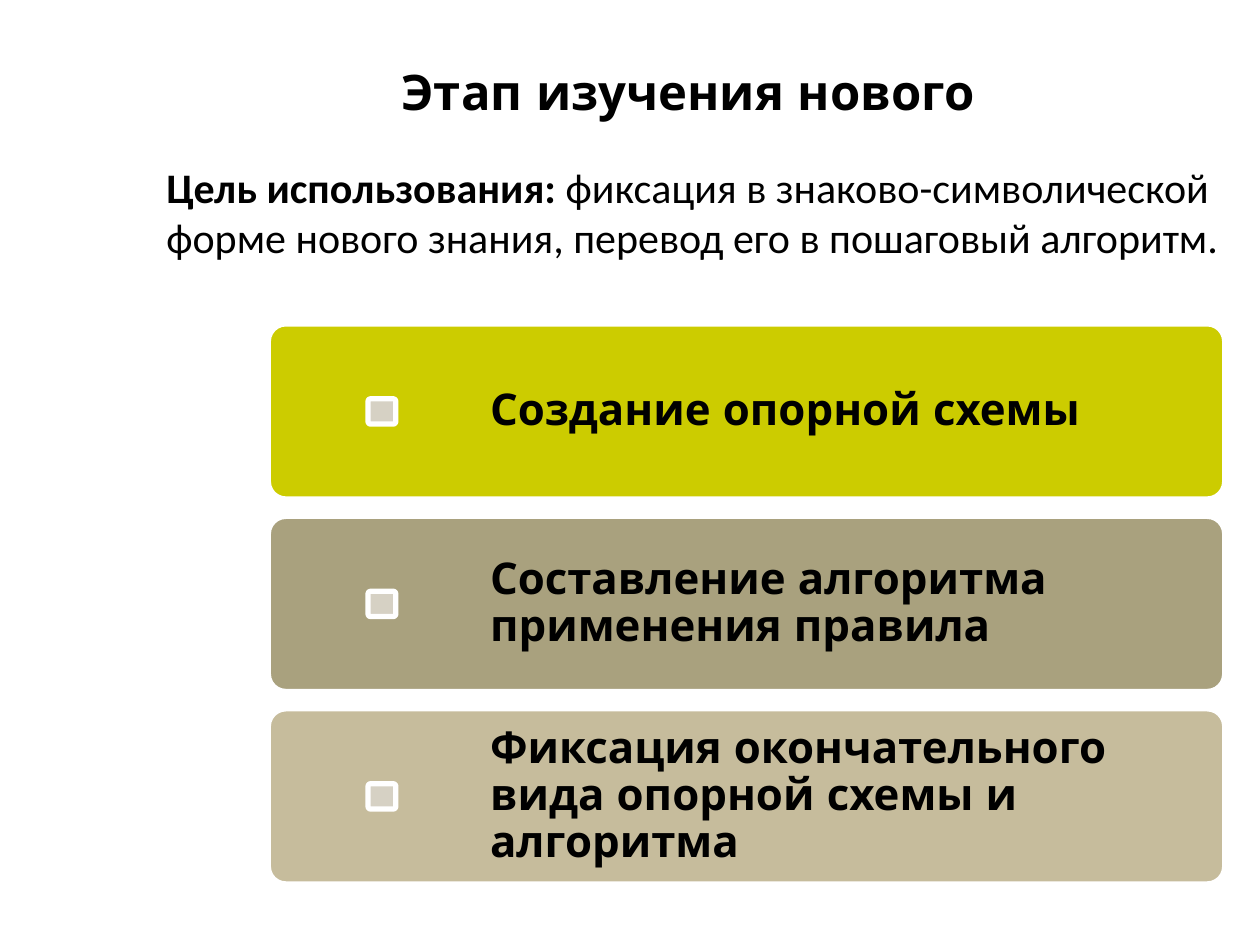
from lxml.etree import SubElement
from pptx import Presentation
from pptx.dml.color import RGBColor
from pptx.enum.shapes import MSO_SHAPE
from pptx.enum.text import MSO_ANCHOR, MSO_AUTO_SIZE, PP_ALIGN
from pptx.oxml.ns import qn
from pptx.util import Cm, Pt

HUES = {
    "ink": "000000", "edge": "FFFFFF", "mark": "D6D1C4",
    "lime": "CCCC00", "olive": "A9A17E", "sand": "C6BC9C",
}
STEPS = [
    ("lime", "Создание опорной схемы"),
    ("olive", "Составление алгоритма применения правила"),
    ("sand", "Фиксация окончательного вида опорной схемы и алгоритма"),
]


class Deck:
    """Style and current slide, with a method for each kind of element."""

    def __init__(self):
        self.show = Presentation()
        self.show.slide_width, self.show.slide_height = Cm(25.4), Cm(19.05)
        self.slide = self.show.slides.add_slide(self.show.slide_layouts[1])

    def hue(self, name):
        return RGBColor.from_string(HUES[name])

    def place(self, shape, box):
        shape.left, shape.top, shape.width, shape.height = map(Cm, box)
        frame = shape.text_frame
        frame.word_wrap = True
        frame.auto_size = MSO_AUTO_SIZE.NONE
        frame.vertical_anchor = MSO_ANCHOR.TOP
        return frame

    def add_text(self, para, text, size, face="Quicksand", bold=True):
        run = para.add_run()
        run.text = text
        font = run.font
        font.name, font.size, font.bold = face, Pt(size), bold
        font.color.rgb = self.hue("ink")

    def title(self, text, box):
        para = self.place(self.slide.shapes.title, box).paragraphs[0]
        para.alignment = PP_ALIGN.CENTER
        self.add_text(para, text, 28)

    def body(self, parts, box):
        para = self.place(self.slide.placeholders[1], box).paragraphs[0]
        props = para._p.get_or_add_pPr()
        props.set("marL", "0")
        props.set("indent", "0")
        SubElement(props, qn("a:buNone"))
        para.space_before = Pt(0)
        for text, bold in parts:
            self.add_text(para, text, 24, "Calibri", bold)

    def panel(self, box, fill):
        shape = self.slide.shapes.add_shape(
            MSO_SHAPE.ROUNDED_RECTANGLE, *map(Cm, box))
        shape.adjustments[0] = 0.1
        shape.shadow.inherit = False
        shape.fill.solid()
        shape.fill.fore_color.rgb = self.hue(fill)
        shape.line.color.rgb = self.hue("edge")
        shape.line.width = Pt(3)

    def label(self, text, box):
        frame = self.place(self.slide.shapes.add_textbox(0, 0, 0, 0), box)
        frame.vertical_anchor = MSO_ANCHOR.MIDDLE
        frame.margin_top = frame.margin_bottom = Cm(0.25)
        para = frame.paragraphs[0]
        para.line_spacing = 0.9
        self.add_text(para, text, 25)

    def step(self, top, fill, text):
        self.panel((5.41, top, 19.28, 3.53), fill)
        self.label(text, (9.63, top, 15.06, 3.53))
        self.panel((7.42, top + 1.51, 0.56, 0.51), "mark")


def main():
    deck = Deck()
    deck.title("Этап изучения нового", (2.84, 1.12, 22.07, 2.24))
    deck.body([
        ("Цель использования: ", True),
        ("фиксация в знаково-символической форме нового знания, "
         "перевод его в пошаговый алгоритм.", False),
    ], (3.1, 3.12, 21.82, 3.07))
    for row, (fill, text) in enumerate(STEPS):
        deck.step(6.53 + row * 3.88, fill, text)
    deck.show.save("out.pptx")


if __name__ == "__main__":
    main()
